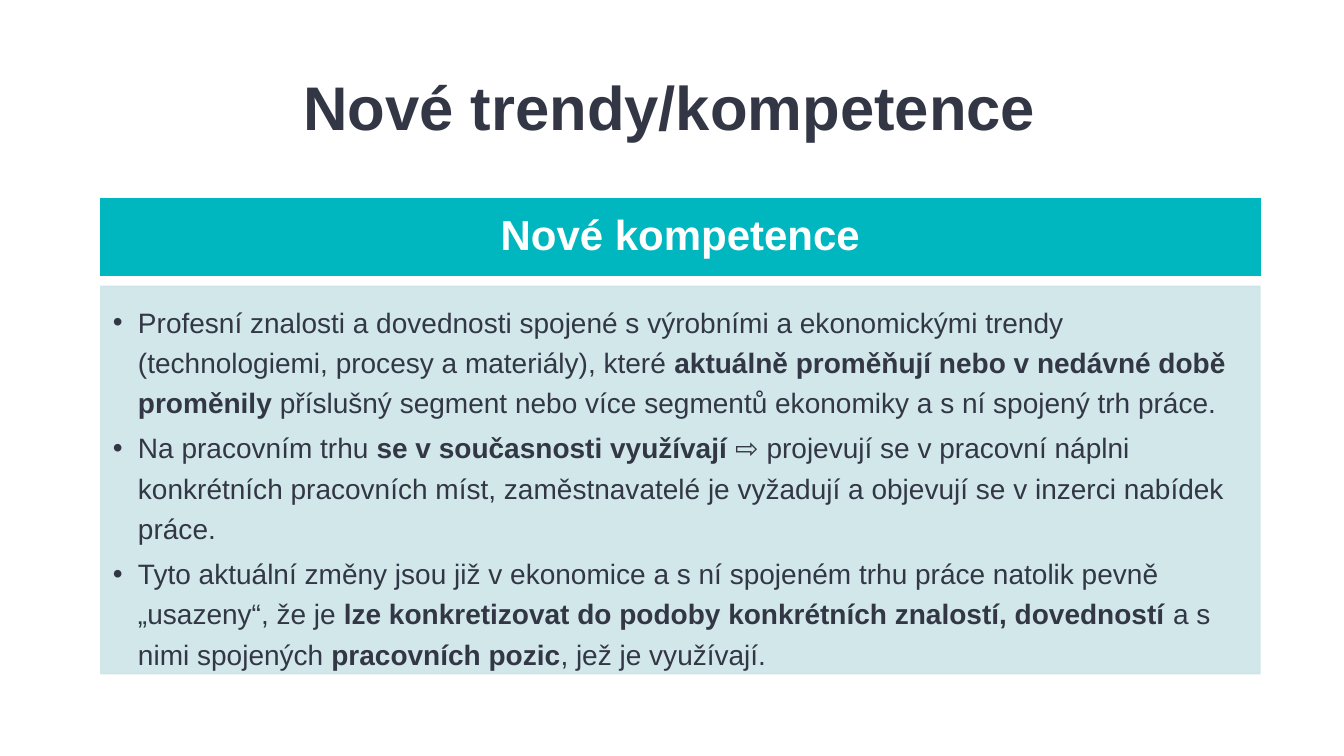
from lxml import etree
from pptx import Presentation
from pptx.dml.color import RGBColor
from pptx.enum.shapes import MSO_SHAPE
from pptx.enum.text import MSO_ANCHOR, PP_ALIGN
from pptx.oxml.ns import qn
from pptx.util import Pt

RECTANGLE = MSO_SHAPE.RECTANGLE
TOP, MIDDLE = MSO_ANCHOR.TOP, MSO_ANCHOR.MIDDLE
LEFT, CENTER = PP_ALIGN.LEFT, PP_ALIGN.CENTER

THEME = {
    "font": "Arial",
    "ink": RGBColor.from_string("333745"),
    "white": RGBColor.from_string("FFFFFF"),
    "teal": RGBColor.from_string("00B6BF"),
    "pale": RGBColor.from_string("CCE5E8"),
    "pale_alpha": 90,
    "title_size": Pt(44),
    "heading_size": Pt(30),
    "body_size": Pt(20),
}

# Each point is a list of (text, bold) runs
POINTS = [
    [("Profesní znalosti a dovednosti spojené s výrobními a ekonomickými trendy "
      "(technologiemi, procesy a materiály), které ", False),
     ("aktuálně proměňují nebo v nedávné době proměnily ", True),
     ("příslušný segment nebo více segmentů ekonomiky a s ní spojený trh práce.", False)],
    [("Na pracovním trhu ", False),
     ("se v současnosti využívají ", True),
     ("⇨ projevují se v pracovní náplni konkrétních pracovních míst, "
      "zaměstnavatelé je vyžadují a objevují se v inzerci nabídek práce.", False)],
    [("Tyto aktuální změny jsou již v ekonomice a s ní spojeném trhu práce "
      "natolik pevně „usazeny“, že je ", False),
     ("lze konkretizovat do podoby konkrétních znalostí, dovedností ", True),
     ("a s nimi spojených ", False),
     ("pracovních pozic", True),
     (", jež je využívají.", False)],
]


def add_panel(top, height, color):
    panel = slide.shapes.add_shape(RECTANGLE, Pt(72), Pt(top), Pt(828), Pt(height))
    panel.shadow.inherit = False
    panel.fill.solid()
    panel.fill.fore_color.rgb = color
    panel.line.color.rgb = color
    panel.line.width = Pt(1)
    etree.SubElement(panel.element.spPr.find(qn("a:ln")), qn("a:miter"), lim="800000")
    return panel


def write_text(shape, paragraphs, size, color, paragraph_format, margins, anchor):
    frame = shape.text_frame
    frame.word_wrap = True
    frame.vertical_anchor = anchor
    for side, margin in zip(("left", "top", "right", "bottom"), margins):
        setattr(frame, f"margin_{side}", Pt(margin))
    for index, runs in enumerate(paragraphs):
        paragraph = frame.add_paragraph() if index else frame.paragraphs[0]
        for name, value in paragraph_format.items():
            setattr(paragraph, name, value)
        for text, bold in runs:
            run = paragraph.add_run()
            run.text = text
            run_format = {"name": THEME["font"], "size": size, "bold": bold}
            for name, value in run_format.items():
                setattr(run.font, name, value)
            run.font.color.rgb = color


presentation = Presentation()
presentation.slide_width, presentation.slide_height = Pt(960), Pt(540)
slide = presentation.slides.add_slide(presentation.slide_layouts[6])
heading_format = {"alignment": CENTER, "line_spacing": 0.9}

# Title
title = slide.shapes.add_textbox(Pt(64.4), Pt(38.2), Pt(828), Pt(82))
write_text(title, [[("Nové trendy/kompetence", True)]], THEME["title_size"],
           THEME["ink"], heading_format, (7.2, 3.6, 7.2, 3.6), MIDDLE)

# Heading band
heading = add_panel(142.2, 54.4, THEME["teal"])
write_text(heading, [[("Nové kompetence", True)]], THEME["heading_size"],
           THEME["white"], heading_format, (16.8, 9.6, 16.8, 9.6), MIDDLE)

# Competences panel
competences = add_panel(204.6, 276.6, THEME["pale"])
for color_node in competences.element.spPr.iter(qn("a:srgbClr")):
    etree.SubElement(color_node, qn("a:alpha"), val=str(THEME["pale_alpha"] * 1000))
point_format = {"alignment": LEFT, "line_spacing": 1.2, "space_after": Pt(3.4)}
write_text(competences, POINTS, THEME["body_size"], THEME["ink"],
           point_format, (8.6, 8.6, 11.5, 12), TOP)

# Bullets with hanging indents
for point in competences.text_frame.paragraphs:
    properties = point._p.get_or_add_pPr()
    properties.set("marL", str(Pt(18)))
    properties.set("indent", str(-Pt(18)))
    etree.SubElement(properties, qn("a:buFont"), typeface=THEME["font"])
    etree.SubElement(properties, qn("a:buChar"), char="•")

presentation.save("out.pptx")
